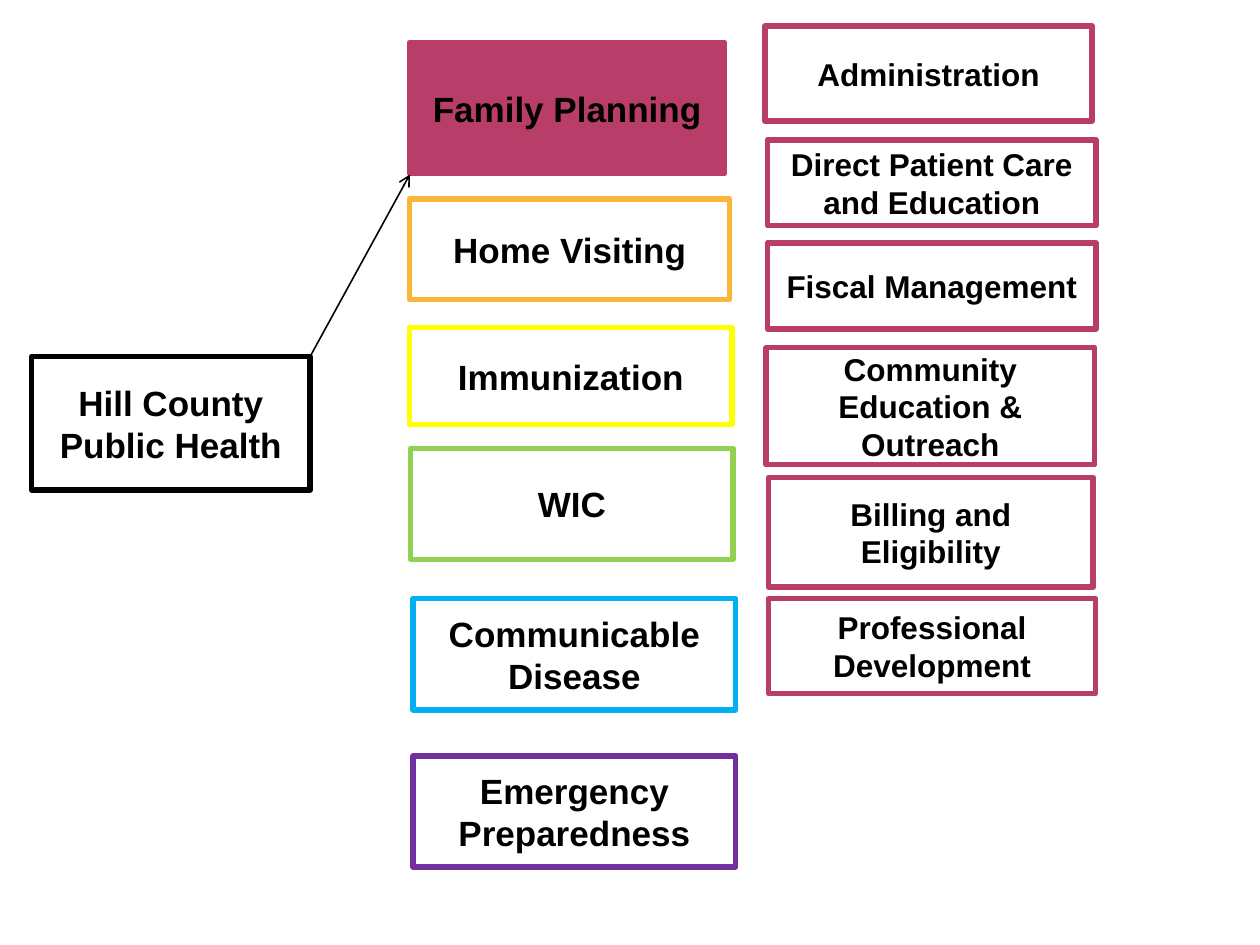
"""Build the Hill County Public Health program chart."""
from lxml import etree
from pptx import Presentation
from pptx.dml.color import RGBColor
from pptx.enum.shapes import MSO_CONNECTOR, MSO_SHAPE
from pptx.enum.text import MSO_ANCHOR, PP_ALIGN
from pptx.oxml.ns import qn
from pptx.util import Cm, Pt

RECTANGLE = MSO_SHAPE.RECTANGLE
STRAIGHT = MSO_CONNECTOR.STRAIGHT
MIDDLE = MSO_ANCHOR.MIDDLE
CENTER = PP_ALIGN.CENTER

THEME = {
    "font": "Arial",
    "program_size": Pt(20),
    "activity_size": Pt(18),
    "border": Pt(3.15),
    "arrow": Pt(0.9),
    "black": RGBColor.from_string("000000"),
    "white": RGBColor.from_string("FFFFFF"),
    "berry": RGBColor.from_string("B83D68"),
    "orange": RGBColor.from_string("F9B639"),
    "yellow": RGBColor.from_string("FFFF00"),
    "green": RGBColor.from_string("92D050"),
    "blue": RGBColor.from_string("00B0F0"),
    "purple": RGBColor.from_string("7030A0"),
}


def add_box(slide, label, bounds, border, size, fill="white"):
    """Add a bordered box with a centred bold label."""
    shape = slide.shapes.add_shape(RECTANGLE, *[Cm(length) for length in bounds])
    shape.shadow.inherit = False
    shape.fill.solid()
    shape.fill.fore_color.rgb = THEME[fill]
    shape.line.color.rgb = THEME[border]
    shape.line.width = THEME["border"]
    text_frame = shape.text_frame
    text_frame.word_wrap = True
    text_frame.vertical_anchor = MIDDLE
    text_frame.text = label
    paragraph = text_frame.paragraphs[0]
    paragraph.alignment = CENTER
    font = paragraph.runs[0].font
    font.name = THEME["font"]
    font.size = THEME[size]
    font.bold = True
    font.color.rgb = THEME["black"]


presentation = Presentation()
presentation.slide_width = Cm(25.4)
presentation.slide_height = Cm(19.05)
slide = presentation.slides.add_slide(presentation.slide_layouts[6])

programs = [
    ("Hill County Public Health", (0.64, 7.19, 5.61, 2.69), "black", "white"),
    ("Family Planning", (8.26, 0.86, 6.35, 2.64), "berry", "berry"),
    ("Home Visiting", (8.26, 4.01, 6.45, 2.03), "orange", "white"),
    ("Immunization", (8.26, 6.6, 6.5, 1.96), "yellow", "white"),
    ("WIC", (8.28, 9.04, 6.5, 2.24), "green", "white"),
    ("Communicable Disease", (8.33, 12.07, 6.5, 2.24), "blue", "white"),
    ("Emergency Preparedness", (8.33, 15.24, 6.5, 2.24), "purple", "white"),
]
for label, bounds, border, fill in programs:
    add_box(slide, label, bounds, border, "program_size", fill)

family_planning_activities = [
    ("Administration", (15.42, 0.53, 6.6, 1.91)),
    ("Direct Patient Care and Education", (15.47, 2.82, 6.63, 1.73)),
    ("Fiscal Management", (15.47, 4.9, 6.63, 1.73)),
    ("Community Education & Outreach", (15.44, 7.01, 6.63, 2.36)),
    ("Billing and Eligibility", (15.49, 9.63, 6.55, 2.21)),
    ("Professional Development", (15.49, 12.07, 6.6, 1.91)),
]
for label, bounds in family_planning_activities:
    add_box(slide, label, bounds, "berry", "activity_size")

arrow = slide.shapes.add_connector(STRAIGHT, Cm(6.25), Cm(7.19), Cm(8.26), Cm(3.52))
arrow.line.color.rgb = THEME["black"]
arrow.line.width = THEME["arrow"]
properties = arrow.element.spPr
etree.SubElement(properties.find(qn("a:ln")), qn("a:tailEnd"), type="arrow")
etree.SubElement(properties, qn("a:effectLst"))

presentation.save("out.pptx")
